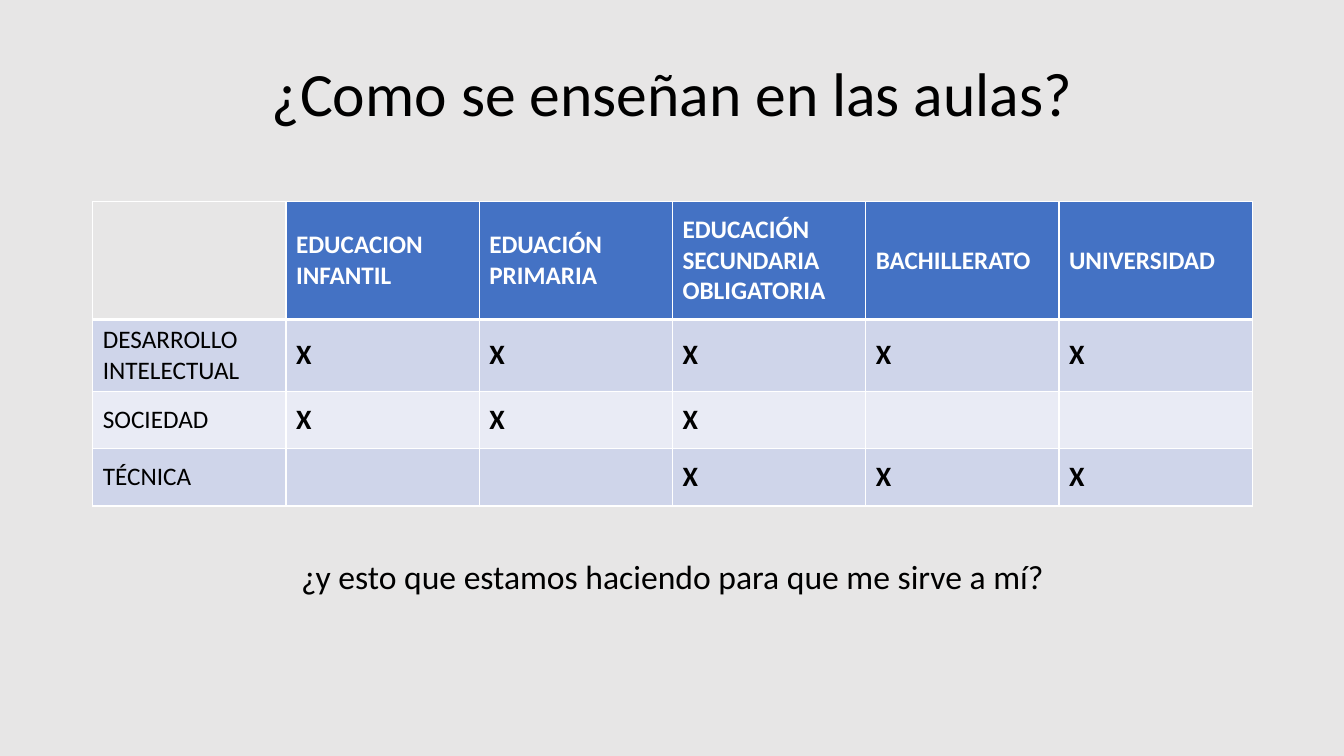
from lxml import etree
from pptx import Presentation
from pptx.dml.color import RGBColor
from pptx.enum.text import MSO_ANCHOR as ANCHOR, MSO_AUTO_SIZE as AUTO, PP_ALIGN as ALIGN
from pptx.oxml import parse_xml
from pptx.oxml.ns import nsdecls
from pptx.util import Inches, Pt

COLORS = {"bg": "E7E6E6", "text": "000000", "white": "FFFFFF",
          "header": "4472C4", "odd": "CFD5EA", "even": "E9EBF5"}
LEFT, WIDTH = Inches(0.92), Inches(11.5)


def write(tf, text, size=18, color="text", bold=False, align=ALIGN.LEFT, spacing=None):
    tf.word_wrap = True
    for i, line in enumerate(text.split("\n")):
        p = tf.paragraphs[0] if i == 0 else tf.add_paragraph()
        p.alignment = align
        p.line_spacing = spacing
        r = p.add_run()
        r.text = line
        r.font.name = "Calibri"
        r.font.size = Pt(size)
        r.font.bold = bold
        r.font.color.rgb = RGBColor.from_string(COLORS[color])


def add_border(cell, side, width):
    ln = parse_xml(f'<a:{side} {nsdecls("a")} w="{Pt(width)}"/>')
    fill = etree.SubElement(ln, f"{{{ln.nsmap['a']}}}solidFill")
    etree.SubElement(fill, f"{{{ln.nsmap['a']}}}srgbClr", val=COLORS["white"])
    cell._tc.get_or_add_tcPr().append(ln)


prs = Presentation()
prs.slide_width, prs.slide_height = Inches(13.33), Inches(7.5)
s = prs.slides.add_slide(prs.slide_layouts[5])
s.background.fill.solid()
s.background.fill.fore_color.rgb = RGBColor.from_string(COLORS["bg"])

title = s.shapes.title
title.left, title.top, title.width, title.height = LEFT, Inches(0.4), WIDTH, Inches(1.11)
title.text_frame.vertical_anchor = ANCHOR.MIDDLE
write(title.text_frame, "¿Como se enseñan en las aulas?", size=44, align=ALIGN.CENTER, spacing=0.9)

rows = [
    ["", "EDUCACION\nINFANTIL", "EDUACIÓN PRIMARIA", "EDUCACIÓN SECUNDARIA OBLIGATORIA",
     "BACHILLERATO", "UNIVERSIDAD"],
    ["DESARROLLO INTELECTUAL", "X", "X", "X", "X", "X"],
    ["SOCIEDAD", "X", "X", "X", "", ""],
    ["TÉCNICA", "", "", "X", "X", "X"],
]
heights = [1.17, 0.71, 0.57, 0.57]
table = s.shapes.add_table(len(rows), len(rows[0]), LEFT, Inches(2), WIDTH, Inches(sum(heights))).table

for i, row in enumerate(rows):
    table.rows[i].height = Inches(heights[i])
    for j, text in enumerate(row):
        cell = table.cell(i, j)
        cell.vertical_anchor = ANCHOR.MIDDLE
        for side in ("lnL", "lnR", "lnT", "lnB"):
            thick = (i, side) in ((0, "lnB"), (1, "lnT"))
            add_border(cell, side, 3 if thick else 1)
        if i == j == 0:
            cell.fill.background()
        else:
            cell.fill.solid()
            band = "header" if i == 0 else "odd" if i % 2 else "even"
            cell.fill.fore_color.rgb = RGBColor.from_string(COLORS[band])
        if text:
            write(cell.text_frame, text, size=20 if text == "X" else 18,
                  color="white" if i == 0 else "text", bold=i == 0 or j > 0)

question = s.shapes.add_textbox(LEFT, Inches(5.47), WIDTH, Inches(0.5))
question.text_frame.auto_size = AUTO.SHAPE_TO_FIT_TEXT
question.text_frame.vertical_anchor = ANCHOR.MIDDLE
write(question.text_frame, "¿y esto que estamos haciendo para que me sirve a mí?", size=24, align=ALIGN.CENTER)

prs.save("out.pptx")
